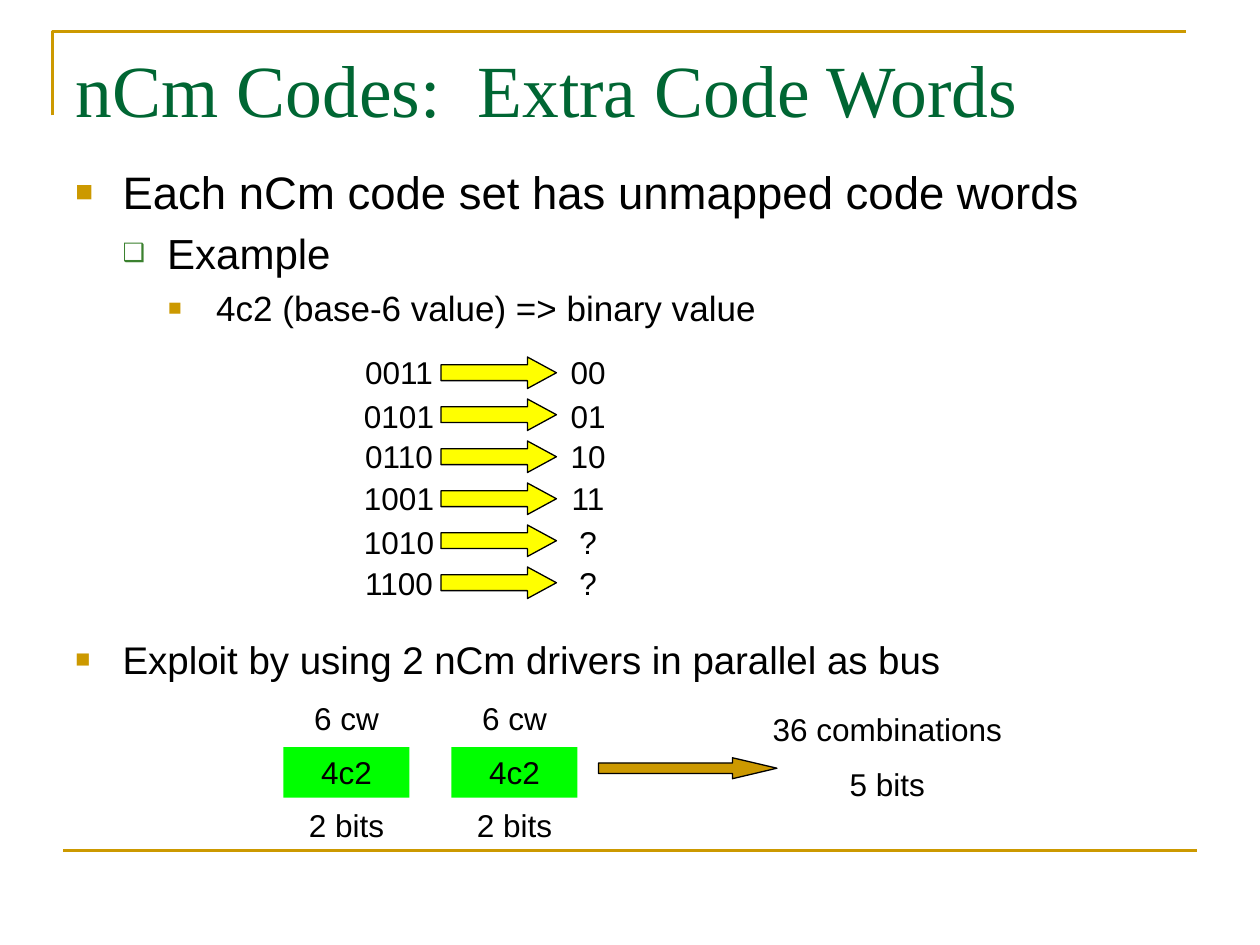
from pptx import Presentation
from pptx.dml.color import RGBColor
from pptx.enum.shapes import MSO_CONNECTOR as Link, MSO_SHAPE as Kind
from pptx.enum.text import MSO_ANCHOR as Anchor, PP_ALIGN as Align
from pptx.oxml.ns import qn
from pptx.util import Pt
from lxml.etree import SubElement

GOLD = RGBColor(0xCC, 0x99, 0x00)
PINE = RGBColor(0x00, 0x66, 0x33)
LEAF = RGBColor(0x3B, 0x81, 0x2F)
LIME = RGBColor(0x00, 0xFF, 0x00)
YELLOW = RGBColor(0xFF, 0xFF, 0x00)
BLACK = RGBColor(0, 0, 0)

# Bullet sign, colour, size in percent, left indent, hanging indent, text size
LEVELS = [("■", GOLD, 65, 27, 27, 26),
          ("❑", LEAF, 60, 52.5, 25.5, 24),
          ("■", GOLD, 65, 80.5, 27.5, 20)]
CODES = [("0011", "00"), ("0101", "01"), ("0110", "10"),
         ("1001", "11"), ("1010", "?"), ("1100", "?")]
TOPS = [0, 25.2, 48.2, 72, 97.2, 121]


def write(para, text, size=18, font="Arial", color=BLACK, align=Align.CENTER, gap=0):
    para.alignment = align
    para.space_before = Pt(gap)
    run = para.add_run()
    run.text = text
    run.font.size = Pt(size)
    run.font.name = font
    run.font.color.rgb = color


def mark(para, level, size=None):
    """Give the paragraph the bullet and indents of its level."""
    sign, color, scale, left, hang, _ = LEVELS[level]
    props = para._p.get_or_add_pPr()
    props.set("marL", str(Pt(left)))
    props.set("indent", str(-Pt(hang)))
    tint = SubElement(props, qn("a:buClr"))
    SubElement(tint, qn("a:srgbClr"), val=str(color))
    SubElement(props, qn("a:buSzPct"), val=str(scale * 1000))
    SubElement(props, qn("a:buFont"), typeface="Arial")
    SubElement(props, qn("a:buChar"), char=sign)


def frame(shape):
    body = shape.text_frame
    body.word_wrap = True
    body.vertical_anchor = Anchor.TOP
    return body


def label(slide, x, y, w, h, *lines):
    body = frame(slide.shapes.add_textbox(Pt(x), Pt(y), Pt(w), Pt(h)))
    for i, line in enumerate(lines):
        para = body.add_paragraph() if i else body.paragraphs[0]
        write(para, line, gap=10 if i else 0)


def bullets(slide, x, y, w, h, items):
    """Place items of (level, text, size)."""
    body = frame(slide.shapes.add_textbox(Pt(x), Pt(y), Pt(w), Pt(h)))
    for i, (level, text, size) in enumerate(items):
        para = body.add_paragraph() if i else body.paragraphs[0]
        write(para, text, size=size, align=Align.LEFT, gap=size * 0.23 if i else 0)
        mark(para, level)


def block(slide, kind, x, y, w, h, fill, edge=None):
    shape = slide.shapes.add_shape(kind, Pt(x), Pt(y), Pt(w), Pt(h))
    shape.shadow.inherit = False
    shape.fill.solid()
    shape.fill.fore_color.rgb = fill
    if edge is None:
        shape.line.fill.background()
    else:
        shape.line.color.rgb = edge
        shape.line.width = Pt(0.75)
    return shape


def arrow(slide, x, y, w, h, fill, head):
    shape = block(slide, Kind.RIGHT_ARROW, x, y, w, h, fill, BLACK)
    shape.adjustments[0] = 0.5
    shape.adjustments[1] = head


def rules(slide, x, y, w, h):
    """Draw the corner line above and the straight line below."""
    pen = slide.shapes.build_freeform(Pt(x), Pt(y + 48), scale=1.0)
    pen.add_line_segments([(Pt(x), Pt(y)), (Pt(x + w), Pt(y))], close=False)
    corner = pen.convert_to_shape()
    corner.shadow.inherit = False
    corner.fill.background()
    base = slide.shapes.add_connector(
        Link.STRAIGHT, Pt(x + 6), Pt(y + h), Pt(x + 6 + w), Pt(y + h))
    SubElement(base._element.spPr, qn("a:effectLst"))
    for shape in (corner, base):
        shape.line.color.rgb = GOLD
        shape.line.width = Pt(1.5)


def title(slide, x, y, w, h, text):
    shape = slide.shapes.title
    shape.left, shape.top, shape.width, shape.height = Pt(x), Pt(y), Pt(w), Pt(h)
    body = frame(shape)
    write(body.paragraphs[0], text, size=42, font="Times New Roman",
          color=PINE, align=Align.LEFT)


def code_map(slide, x, y):
    for i, ((code, value), top) in enumerate(zip(CODES, TOPS)):
        label(slide, x, y + top, 60, 28.8, code)
        label(slide, x + 108, y + top, 60, 28.8, value)
        arrow(slide, x + 54, y + 6 + 24 * i, 66, 18, YELLOW, 0.92)


def drivers(slide, x, y):
    for left in (x, x + 96):
        label(slide, left, y, 72, 28.8, "6 cw")
        box = block(slide, Kind.RECTANGLE, left, y + 31, 72, 28.8, LIME)
        write(frame(box).paragraphs[0], "4c2")
        label(slide, left, y + 61, 72, 28.8, "2 bits")
    arrow(slide, x + 180, y + 37, 102, 12, GOLD, 2.12)
    label(slide, x + 264, y + 6, 162, 61, "36 combinations", "5 bits")


def main():
    deck = Presentation()
    deck.slide_width, deck.slide_height = Pt(720), Pt(540)
    slide = deck.slides.add_slide(deck.slide_layouts[5])
    rules(slide, 30, 18, 648, 468)
    title(slide, 36, 21.6, 648, 50.4, "nCm Codes:  Extra Code Words")
    tree = ["Each nCm code set has unmapped code words", "Example",
            "4c2 (base-6 value) => binary value"]
    bullets(slide, 36, 90, 648, 108,
            [(i, text, LEVELS[i][5]) for i, text in enumerate(tree)])
    code_map(slide, 198, 198)
    bullets(slide, 36, 360, 648, 42,
            [(0, "Exploit by using 2 nCm drivers in parallel as bus", 22)])
    drivers(slide, 162, 396)
    deck.save("out.pptx")


if __name__ == "__main__":
    main()
